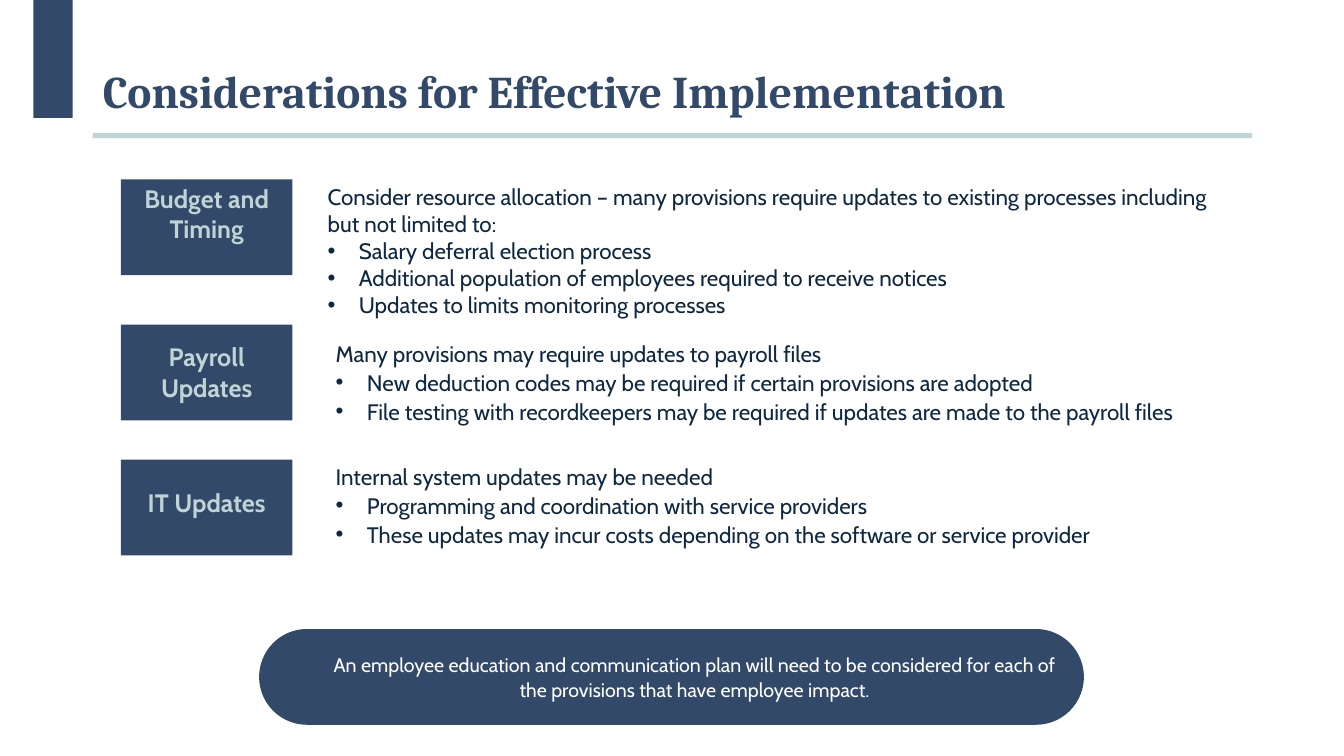
from lxml.etree import SubElement
from pptx import Presentation
from pptx.dml.color import RGBColor
from pptx.enum.shapes import MSO_SHAPE
from pptx.enum.text import MSO_ANCHOR, MSO_AUTO_SIZE, PP_ALIGN
from pptx.oxml.ns import qn
from pptx.util import Inches, Pt

NAVY = RGBColor(0x33, 0x49, 0x69)
MIST = RGBColor(0xC0, 0xD4, 0xD5)
INK = RGBColor(0x0E, 0x28, 0x41)
WHITE = RGBColor(0xFF, 0xFF, 0xFF)
HEAD, BODY = "Cambria", "Cabin"

# label, box top, label inset, list slot, list box, line spacing, lead, bullets
TOPICS = [
    ("Budget and Timing", 1.78, 0.04, 1, (3.15, 1.77, 9.22, 1.69), 1.0,
     "Consider resource allocation – many provisions require updates to "
     "existing processes including but not limited to:",
     ["Salary deferral election process",
      "Additional population of employees required to receive notices",
      "Updates to limits monitoring processes"]),
    ("Payroll Updates", 3.22, 0.17, 2, (3.23, 3.3, 9.22, 1.25), 1.08,
     "Many provisions may require updates to payroll files",
     ["New deduction codes may be required if certain provisions are adopted",
      "File testing with recordkeepers may be required if updates are made "
      "to the payroll files"]),
    ("IT Updates", 4.56, 0.27, 3, (3.23, 4.52, 9.22, 0.96), 1.08,
     "Internal system updates may be needed",
     ["Programming and coordination with service providers",
      "These updates may incur costs depending on the software or service "
      "provider"]),
]


class Deck:
    """Holds the style and the current slide."""

    def __init__(self):
        self.prs = Presentation()
        self.prs.slide_width = Inches(13.33)
        self.prs.slide_height = Inches(7.5)
        self.slide = self.prs.slides.add_slide(self.prs.slide_layouts[4])

    def place(self, shape, box):
        shape.left, shape.top, shape.width, shape.height = map(Inches, box)

    def style(self, para, size, color, font=BODY, bold=False, line=1.0):
        para.line_spacing = line
        para.space_before = para.space_after = Pt(0)
        for run in para.runs:
            run.font.size = Pt(size)
            run.font.name = font
            run.font.bold = bold
            run.font.color.rgb = color

    def title(self, text, box):
        shape = self.slide.shapes.title
        self.place(shape, box)
        frame = shape.text_frame
        frame.text = text
        frame.auto_size = MSO_AUTO_SIZE.NONE
        frame.vertical_anchor = MSO_ANCHOR.MIDDLE
        para = frame.paragraphs[0]
        para.alignment = PP_ALIGN.LEFT
        self.style(para, 32.4, NAVY, HEAD, True, 0.9)

    def block(self, box, color=NAVY, kind=MSO_SHAPE.RECTANGLE):
        shape = self.slide.shapes.add_shape(kind, *map(Inches, box))
        shape.shadow.inherit = False
        shape.fill.solid()
        shape.fill.fore_color.rgb = color
        shape.line.fill.background()
        return shape

    def label(self, shape, text, size, color, pads, bold=False, line=1.0):
        frame = shape.text_frame
        frame.word_wrap = True
        frame.vertical_anchor = MSO_ANCHOR.TOP
        left, top, right = map(Inches, pads)
        frame.margin_left, frame.margin_top, frame.margin_right = left, top, right
        frame.text = text
        para = frame.paragraphs[0]
        para.alignment = PP_ALIGN.CENTER
        self.style(para, size, color, bold=bold, line=line)

    def points(self, slot, box, lead, items, line):
        shape = self.slide.placeholders[slot]
        self.place(shape, box)
        frame = shape.text_frame
        frame.text = "\n".join([lead, *items])
        frame.auto_size = MSO_AUTO_SIZE.NONE
        frame.vertical_anchor = MSO_ANCHOR.TOP
        for rank, para in enumerate(frame.paragraphs):
            self.style(para, 16, INK, line=line)
            self.mark(para, rank > 0)

    def mark(self, para, dot):
        props = para._p.get_or_add_pPr()
        dent = Inches(0.31) if dot else 0
        props.set("marL", str(dent))
        props.set("indent", str(-dent))
        if dot:
            SubElement(props, qn("a:buFont")).set("typeface", "Arial")
            SubElement(props, qn("a:buChar")).set("char", "•")
        else:
            SubElement(props, qn("a:buNone"))

    def prune(self):
        for shape in list(self.slide.placeholders):
            if not shape.text_frame.text:
                shape.element.getparent().remove(shape.element)


def main():
    deck = Deck()
    deck.block((0.92, 1.32, 11.5, 0.05), MIST)
    deck.block((0.33, 0, 0.39, 1.17))
    deck.title("Considerations for Effective Implementation",
               (0.92, 0.53, 9.71, 0.8))
    for name, top, pad, slot, box, line, lead, items in TOPICS:
        tile = deck.block((1.2, top, 1.7, 0.95))
        deck.label(tile, name, 18, MIST, (0.1, pad, 0.1), True)
        deck.points(slot, box, lead, items, line)
    pill = deck.block((2.57, 6.24, 8.18, 0.95), kind=MSO_SHAPE.ROUNDED_RECTANGLE)
    pill.adjustments[0] = 0.5
    deck.label(pill, "An employee education and communication plan will need to "
               "be considered for each of the provisions that have employee "
               "impact.", 14, WHITE, (0.54, 0.08, 0.08), line=1.08)
    deck.prune()
    deck.prs.save("out.pptx")


if __name__ == "__main__":
    main()
